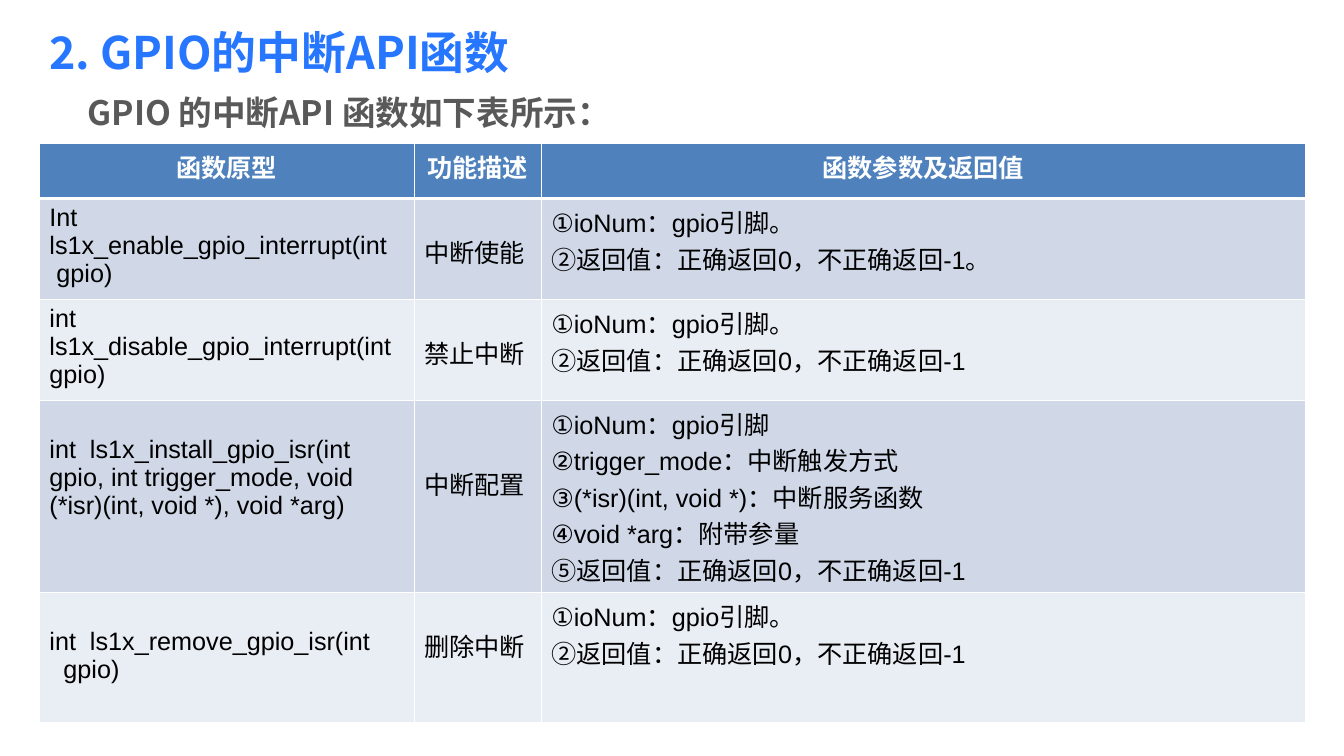
from lxml import etree
from pptx import Presentation
from pptx.dml.color import RGBColor
from pptx.enum.text import MSO_ANCHOR, PP_ALIGN
from pptx.oxml.ns import qn
from pptx.util import Pt

CENTER, LEFT = PP_ALIGN.CENTER, PP_ALIGN.LEFT
MIDDLE, TOP = MSO_ANCHOR.MIDDLE, MSO_ANCHOR.TOP

COLORS = {
    "title": "2676FF",
    "subtitle": "595959",
    "header": "4F81BD",
    "odd_row": "D0D8E8",
    "even_row": "E9EDF4",
    "white": "FFFFFF",
    "black": "000000",
}
CJK_FONT = "Noto Sans CJK SC"
LATIN_FONT = "Arial"

COLUMN_WIDTHS = [267.84, 90.72, 545.76]
ROW_HEIGHTS = [39.5, 69, 68, 137.5, 93]
CELL_MARGIN = 3.6
LINE_DROP = 21.5  # one line of free space above a cell's text

HEADERS = ["函数原型", "功能描述", "函数参数及返回值"]
PIN = "①ioNum：gpio引脚"
RESULT = "返回值：正确返回0，不正确返回-1"

# Each cell: lines, free lines above the text, indent of the last line
API_ROWS = [
    [(["Int ls1x_enable_gpio_interrupt(int", "gpio)"], 0, 5),
     (["中断使能"], 1, 0),
     ([PIN + "。", "②" + RESULT + "。"], 0, 0)],
    [(["int ls1x_disable_gpio_interrupt(int", "gpio)"], 0, 0),
     (["禁止中断"], 1, 0),
     ([PIN + "。", "②" + RESULT], 0, 0)],
    [(["int  ls1x_install_gpio_isr(int gpio, int trigger_mode, "
       "void (*isr)(int, void *), void *arg)"], 1, 0),
     (["中断配置"], 2, 0),
     ([PIN, "②trigger_mode：中断触发方式", "③(*isr)(int, void *)：中断服务函数",
       "④void *arg：附带参量", "⑤" + RESULT], 0, 0)],
    [(["int  ls1x_remove_gpio_isr(int", "gpio)"], 1, 10),
     (["删除中断"], 1, 0),
     ([PIN + "。", "②" + RESULT], 0, 0)],
]


def write_lines(frame, lines, size, color, bold=False, latin=LATIN_FONT, align=LEFT):
    for index, line in enumerate(lines):
        paragraph = frame.add_paragraph() if index else frame.paragraphs[0]
        paragraph.text = line
        paragraph.alignment = align
        font = paragraph.font
        font.size, font.bold, font.name = Pt(size), bold, latin
        font.color.rgb = RGBColor.from_string(COLORS[color])
        properties = paragraph._p.pPr.find(qn("a:defRPr"))
        etree.SubElement(properties, qn("a:ea"), typeface=CJK_FONT)


def add_heading(slide, text, box, size, color):
    shape = slide.shapes.add_textbox(*map(Pt, box))
    frame = shape.text_frame
    frame.word_wrap = True
    frame.vertical_anchor = MIDDLE
    write_lines(frame, [text], size, color, True, CJK_FONT)


def set_borders(cell, top, bottom):
    properties = cell._tc.get_or_add_tcPr()
    sides = {"a:lnL": 1, "a:lnR": 1, "a:lnT": top, "a:lnB": bottom}
    for index, (tag, width) in enumerate(sides.items()):
        line = etree.Element(qn(tag), w=str(Pt(width)))
        fill = etree.SubElement(line, qn("a:solidFill"))
        etree.SubElement(fill, qn("a:srgbClr"), val=COLORS["white"])
        properties.insert(index, line)


def style_cell(cell, fill, top=1, bottom=1, free_lines=0):
    cell.fill.solid()
    cell.fill.fore_color.rgb = RGBColor.from_string(COLORS[fill])
    cell.vertical_anchor = TOP
    cell.margin_top = Pt(CELL_MARGIN + free_lines * LINE_DROP)
    set_borders(cell, top, bottom)


def add_api_table(slide):
    frame = slide.shapes.add_table(
        len(ROW_HEIGHTS), len(COLUMN_WIDTHS), Pt(28.08), Pt(102.24),
        Pt(sum(COLUMN_WIDTHS)), Pt(sum(ROW_HEIGHTS)))
    table = frame.table
    table.first_row = table.horz_banding = False
    for column, width in zip(table.columns, COLUMN_WIDTHS):
        column.width = Pt(width)
    for row, height in zip(table.rows, ROW_HEIGHTS):
        row.height = Pt(height)

    # Header row
    for column_index, header in enumerate(HEADERS):
        cell = table.cell(0, column_index)
        style_cell(cell, "header", bottom=3)
        write_lines(cell.text_frame, [header], 18, "white", True, align=CENTER)

    # Function rows
    for row_index, cells in enumerate(API_ROWS, start=1):
        fill = "odd_row" if row_index % 2 else "even_row"
        for column_index, (lines, free_lines, indent) in enumerate(cells):
            cell = table.cell(row_index, column_index)
            style_cell(cell, fill, 3 if row_index == 1 else 1, 1, free_lines)
            write_lines(cell.text_frame, lines, 18, "black")
            if indent:
                last_line = cell.text_frame.paragraphs[-1]
                last_line._p.pPr.set("marL", str(Pt(indent)))


def main():
    presentation = Presentation()
    presentation.slide_width, presentation.slide_height = Pt(960), Pt(540)
    slide = presentation.slides.add_slide(presentation.slide_layouts[6])
    add_heading(slide, "2. GPIO的中断API函数", (28.08, 10.8, 661.68, 51.84), 32, "title")
    add_api_table(slide)
    add_heading(slide, "GPIO 的中断API 函数如下表所示：", (55.44, 61.92, 563.04, 36), 24, "subtitle")
    presentation.save("out.pptx")


if __name__ == "__main__":
    main()
